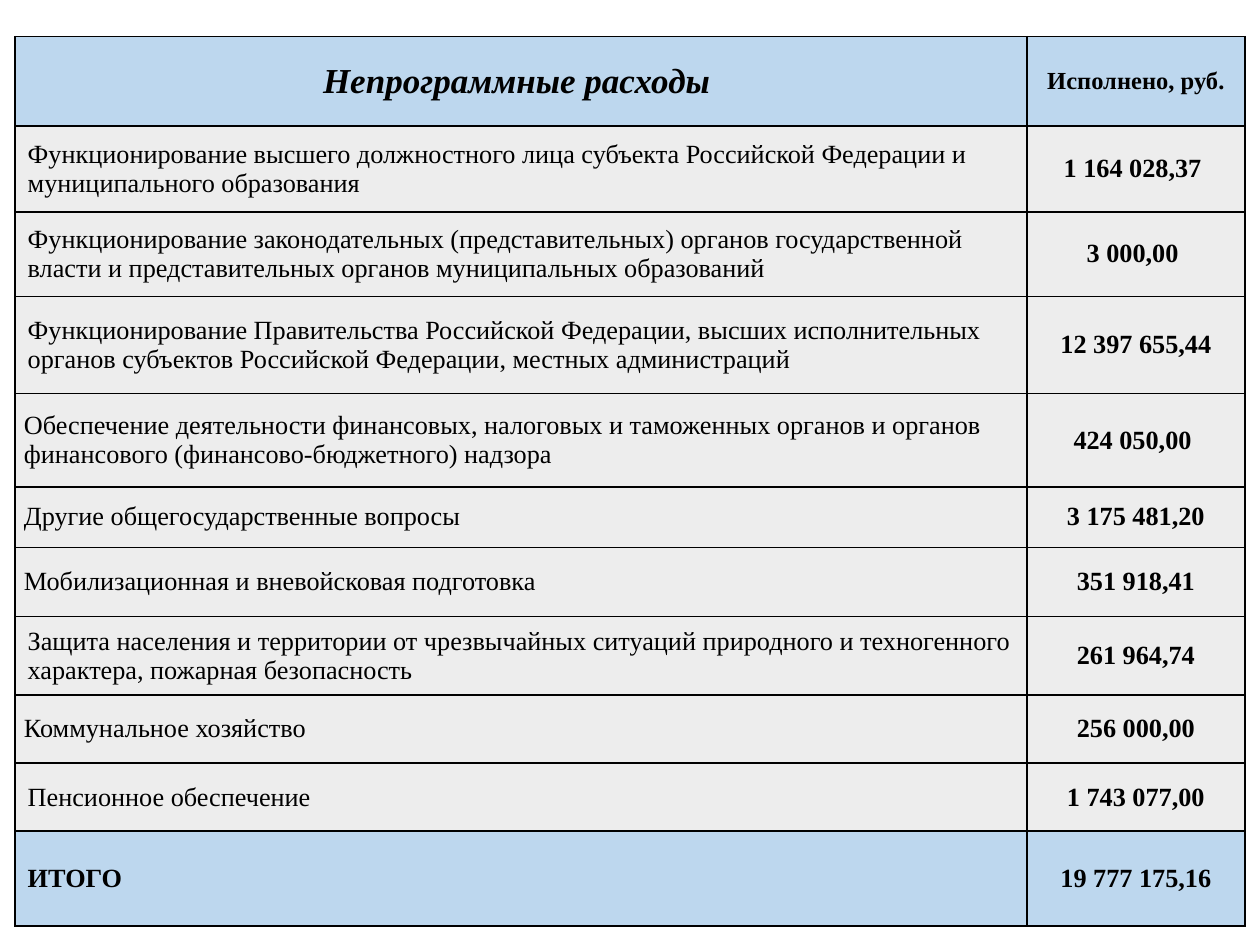
from dataclasses import dataclass

from lxml.etree import SubElement
from pptx import Presentation
from pptx.dml.color import RGBColor
from pptx.enum.text import MSO_ANCHOR, PP_ALIGN
from pptx.oxml.ns import qn
from pptx.util import Inches, Pt


@dataclass(frozen=True)
class Theme:
    font: str = "Times New Roman"
    ink: str = "000000"
    band: str = "BDD7EE"
    body: str = "EDEDED"
    title_size: int = 20
    heading_size: int = 14
    text_size: int = 15
    border: int = 1


THEME = Theme()
WIDE, NARROW = (0.1, 0.05), (0.07, 0)  # side and top/bottom cell margins
COLUMN_WIDTHS = (8.03, 1.73)

# Row height, cell margins, expense, amount
HEADER = (0.71, WIDE, "Непрограммные расходы ", "Исполнено, руб.")
EXPENSES = [
    (0.68, WIDE, "Функционирование высшего должностного лица субъекта Российской "
                 "Федерации и муниципального образования", "1 164 028,37 "),
    (0.67, WIDE, "Функционирование законодательных (представительных) органов "
                 "государственной власти и представительных органов муниципальных "
                 "образований", "3 000,00 "),
    (0.77, WIDE, "Функционирование Правительства Российской Федерации, высших "
                 "исполнительных органов субъектов Российской Федерации, местных "
                 "администраций", "12 397 655,44"),
    (0.74, NARROW, "Обеспечение деятельности финансовых, налоговых и таможенных "
                   "органов и органов финансового (финансово-бюджетного) надзора",
     "424 050,00 "),
    (0.48, NARROW, "Другие общегосударственные вопросы", "3 175 481,20"),
    (0.55, NARROW, "Мобилизационная и вневойсковая подготовка", "351 918,41"),
    (0.62, WIDE, "Защита населения и территории от чрезвычайных ситуаций природного "
                 "и техногенного характера, пожарная безопасность", "261 964,74"),
    (0.54, NARROW, "Коммунальное хозяйство", "256 000,00"),
    (0.54, WIDE, "Пенсионное обеспечение", "1 743 077,00"),
]
TOTAL = (0.75, WIDE, "ИТОГО", "19 777 175,16")


def add_borders(cell):
    properties = cell._tc.get_or_add_tcPr()
    for position, side in enumerate(("lnL", "lnR", "lnT", "lnB")):
        line = SubElement(properties, qn(f"a:{side}"), w=str(Pt(THEME.border)))
        fill = SubElement(line, qn("a:solidFill"))
        SubElement(fill, qn("a:srgbClr"), val=THEME.ink)
        properties.remove(line)
        properties.insert(position, line)  # borders precede the cell fill


def fill_cell(cell, text, margins, fill, size, bold, italic=False, centred=False):
    cell.margin_left = cell.margin_right = Inches(margins[0])
    cell.margin_top = cell.margin_bottom = Inches(margins[1])
    cell.vertical_anchor = MSO_ANCHOR.MIDDLE
    cell.fill.solid()
    cell.fill.fore_color.rgb = RGBColor.from_string(fill)
    add_borders(cell)
    cell.text = text
    paragraph = cell.text_frame.paragraphs[0]
    paragraph.alignment = PP_ALIGN.CENTER if centred else PP_ALIGN.LEFT
    font = paragraph.font
    font.name, font.size = THEME.font, Pt(size)
    font.bold, font.italic = bold, italic
    font.color.rgb = RGBColor.from_string(THEME.ink)


def add_expense_table(slide, left, top, width, height):
    records = [HEADER, *EXPENSES, TOTAL]
    table = slide.shapes.add_table(len(records), 2, left, top, width, height).table
    for column, share in zip(table.columns, COLUMN_WIDTHS):
        column.width = int(width * share / sum(COLUMN_WIDTHS))
    height_sum = sum(record[0] for record in records)

    for row, record in zip(table.rows, records):
        row_height, margins, expense, amount = record
        row.height = int(height * row_height / height_sum)
        is_header = record is HEADER
        is_band = is_header or record is TOTAL
        fill = THEME.band if is_band else THEME.body
        expense_size = THEME.title_size if is_header else THEME.text_size
        amount_size = THEME.heading_size if is_header else THEME.text_size
        fill_cell(row.cells[0], expense, margins, fill, expense_size,
                  bold=is_band, italic=is_header, centred=is_header)
        fill_cell(row.cells[1], amount, margins, fill, amount_size,
                  bold=True, centred=True)


def main():
    presentation = Presentation()
    presentation.slide_width, presentation.slide_height = Inches(10), Inches(7.5)
    slide = presentation.slides.add_slide(presentation.slide_layouts[6])
    add_expense_table(slide, Inches(0.12), Inches(0.29), Inches(9.76), Inches(7.06))
    presentation.save("out.pptx")


if __name__ == "__main__":
    main()
